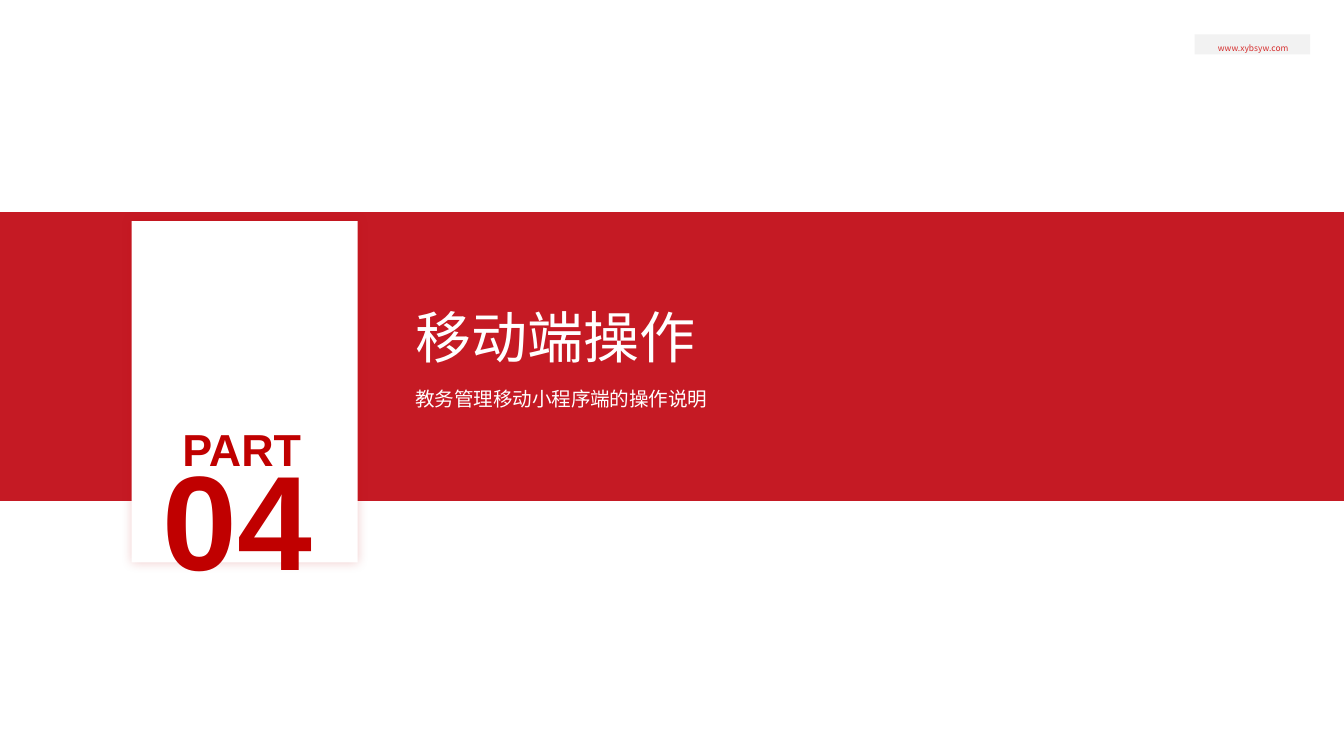
from lxml.etree import SubElement
from pptx import Presentation
from pptx.dml.color import RGBColor
from pptx.enum.shapes import MSO_SHAPE
from pptx.enum.text import MSO_ANCHOR, MSO_AUTO_SIZE, PP_ALIGN
from pptx.oxml import parse_xml
from pptx.oxml.ns import nsdecls, qn
from pptx.util import Cm, Pt

BAND_RED = RGBColor(0xC5, 0x1A, 0x24)
NUMBER_RED = RGBColor(0xC0, 0x00, 0x00)
LINK_RED = RGBColor(0xD6, 0x2F, 0x2F)
SHADOW_RED = RGBColor(0xB9, 0x00, 0x03)
PALE_GREY = RGBColor(0xF2, 0xF2, 0xF2)
WHITE = RGBColor(0xFF, 0xFF, 0xFF)
LATIN_FONT = "Arial"
CHINESE_FONT = "Noto Sans CJK SC"


def lengths(box):
    return [Cm(value) for value in box]


def add_rectangle(shapes, box, color):
    rectangle = shapes.add_shape(MSO_SHAPE.RECTANGLE, *lengths(box))
    rectangle.shadow.inherit = False
    rectangle.fill.solid()
    rectangle.fill.fore_color.rgb = color
    rectangle.line.fill.background()
    return rectangle


def add_glow(shape, color, blur, opacity):
    effects = shape._element.spPr.find(qn("a:effectLst"))
    effects.append(parse_xml(
        f'<a:outerShdw {nsdecls("a")} blurRad="{Pt(blur)}" dist="0" dir="13500000" '
        f'algn="ctr" rotWithShape="0"><a:srgbClr val="{color}">'
        f'<a:alpha val="{opacity * 1000}"/></a:srgbClr></a:outerShdw>'))


def write(shape, text, size, color, font=CHINESE_FONT, bold=False, wrap=True,
          align=PP_ALIGN.LEFT, anchor=MSO_ANCHOR.MIDDLE, side=0.13, edge=0.13):
    frame = shape.text_frame
    frame.word_wrap = wrap
    frame.auto_size = MSO_AUTO_SIZE.NONE
    frame.vertical_anchor = anchor
    frame.margin_left = frame.margin_right = Cm(side)
    frame.margin_top = frame.margin_bottom = Cm(edge)
    para = frame.paragraphs[0]
    para.alignment = align
    para.space_before = Pt(0)
    span = para.add_run()
    span.text = text
    span.font.size = Pt(size)
    span.font.bold = bold
    span.font.name = font
    span.font.color.rgb = color
    SubElement(span.font._element, qn("a:ea"), typeface=font)


def place(shape, box):
    shape.left, shape.top, shape.width, shape.height = lengths(box)
    return shape


def add_heading(page, left, top):
    title = place(page.shapes.title, (left, top, 12.12, 1.52))
    write(title, "移动端操作", 30, WHITE)
    subtitle = place(page.placeholders[1], (left, top + 1.62, 12.47, 0.64))
    write(subtitle, "教务管理移动小程序端的操作说明", 10.5, WHITE, edge=0.1)


def add_part_card(page, left, top, width, height):
    card = add_rectangle(page.shapes, (left, top, width, height), WHITE)
    add_glow(card, SHADOW_RED, blur=6, opacity=20)
    text_left = left + 0.33
    number = page.shapes.add_textbox(*lengths((text_left, top + 0.84, 3.76, 6.4)))
    write(number, "04", 72, NUMBER_RED, font=LATIN_FONT, bold=True,
          anchor=MSO_ANCHOR.BOTTOM, side=0.25)
    label = page.shapes.add_textbox(*lengths((text_left, top + 3.66, 3.12, 1.27)))
    write(label, "PART", 24, NUMBER_RED, font=LATIN_FONT, bold=True,
          align=PP_ALIGN.RIGHT, side=0.25)


def add_address_tag(page, left, top, width, height):
    group = page.shapes.add_group_shape()
    add_rectangle(group.shapes, (left, top, width, height), PALE_GREY)
    address = group.shapes.add_textbox(*lengths((left + 0.28, top + 0.03, 1.65, 0.46)))
    write(address, "www.xybsyw.com", 4.5, LINK_RED, wrap=False, align=PP_ALIGN.CENTER)


def add_section_page(deck):
    page = deck.slides.add_slide(deck.slide_layouts[0])
    band = add_rectangle(page.shapes, (0, 4.01, 25.4, 5.46), BAND_RED)
    page.shapes.title._element.addprevious(band._element)
    add_heading(page, 7.72, 5.59)
    add_part_card(page, 2.49, 4.18, 4.27, 6.45)
    add_address_tag(page, 22.58, 0.65, 2.18, 0.38)


def main():
    deck = Presentation()
    deck.slide_width, deck.slide_height = Cm(25.4), Cm(14.29)
    add_section_page(deck)
    deck.save("out.pptx")


if __name__ == "__main__":
    main()
